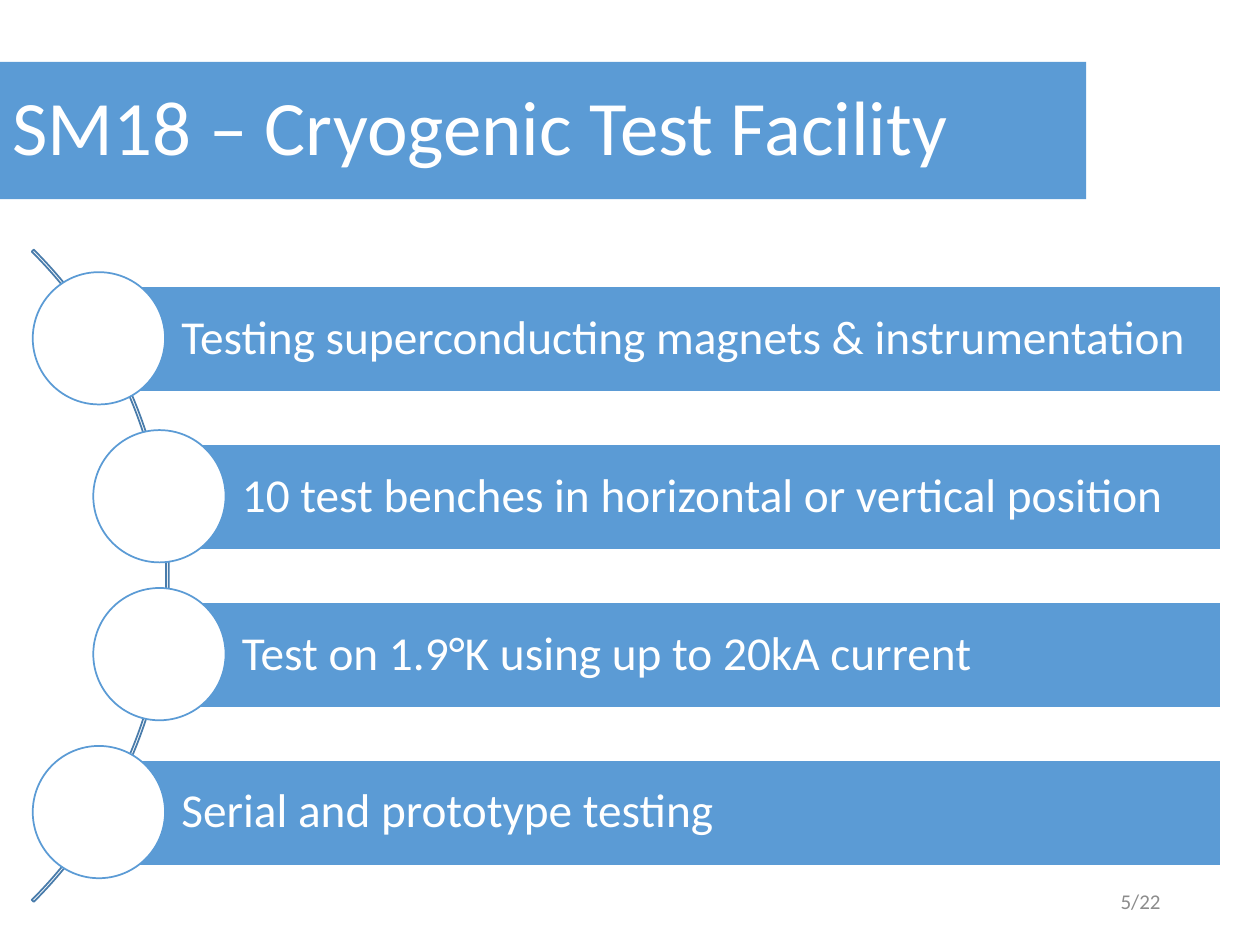
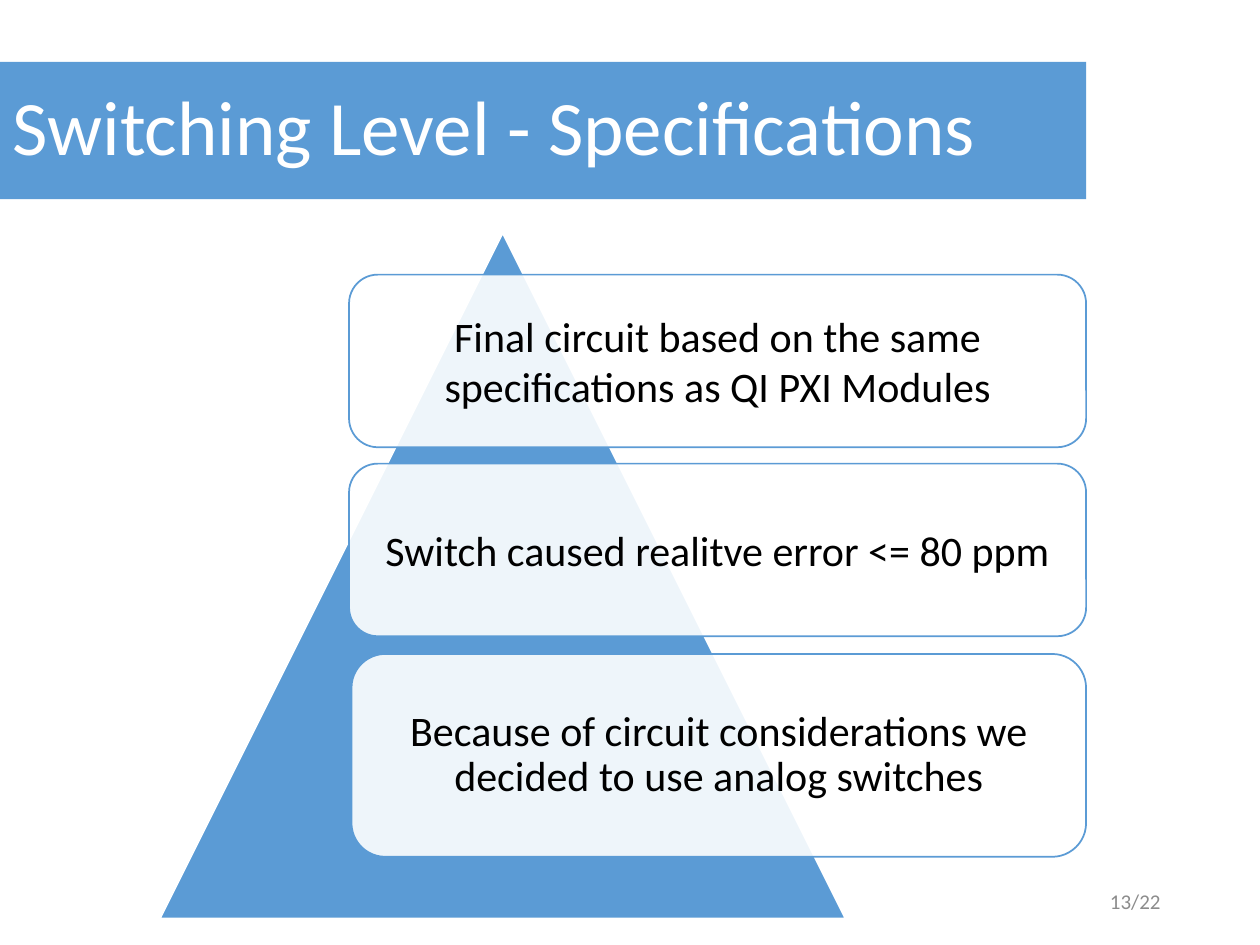
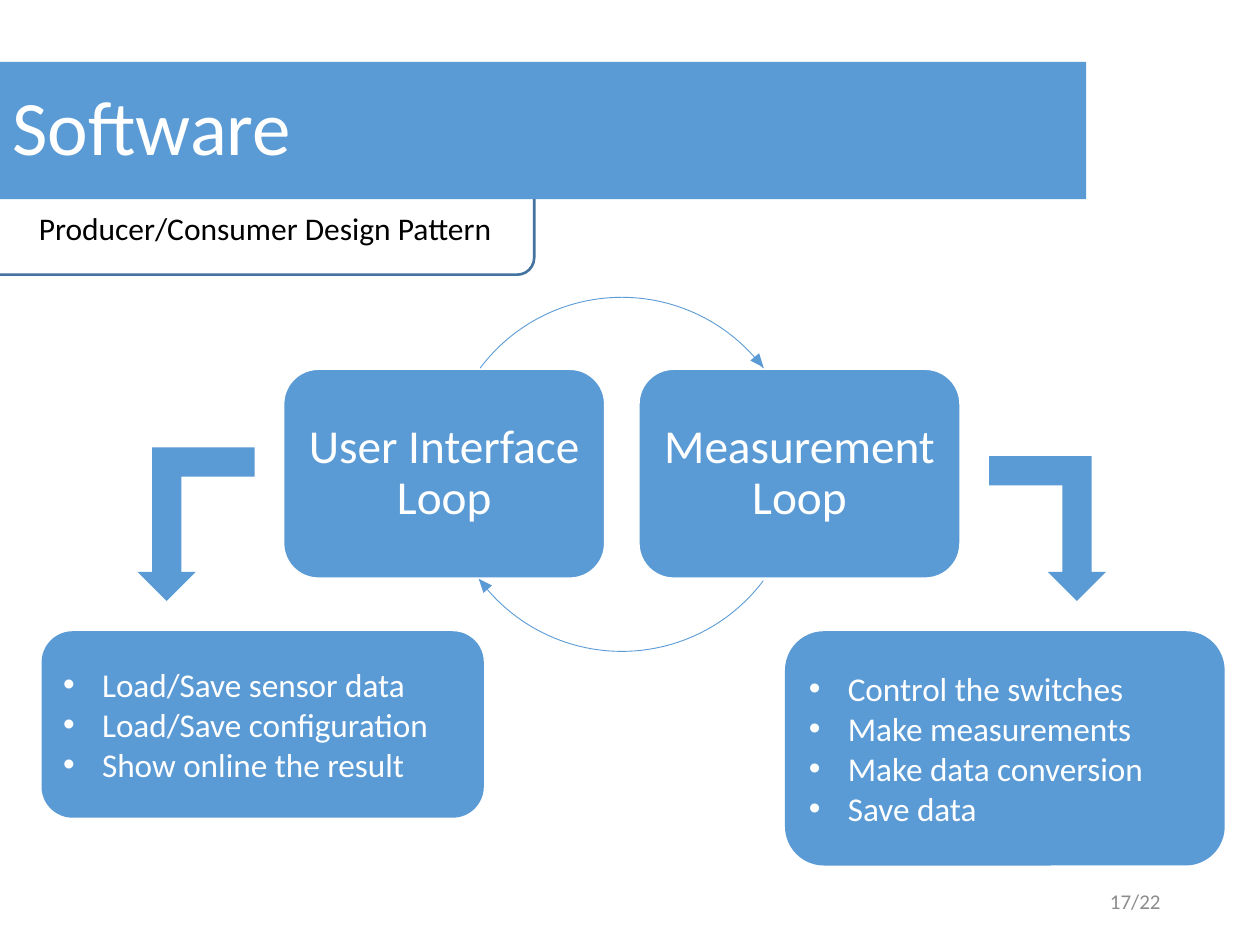
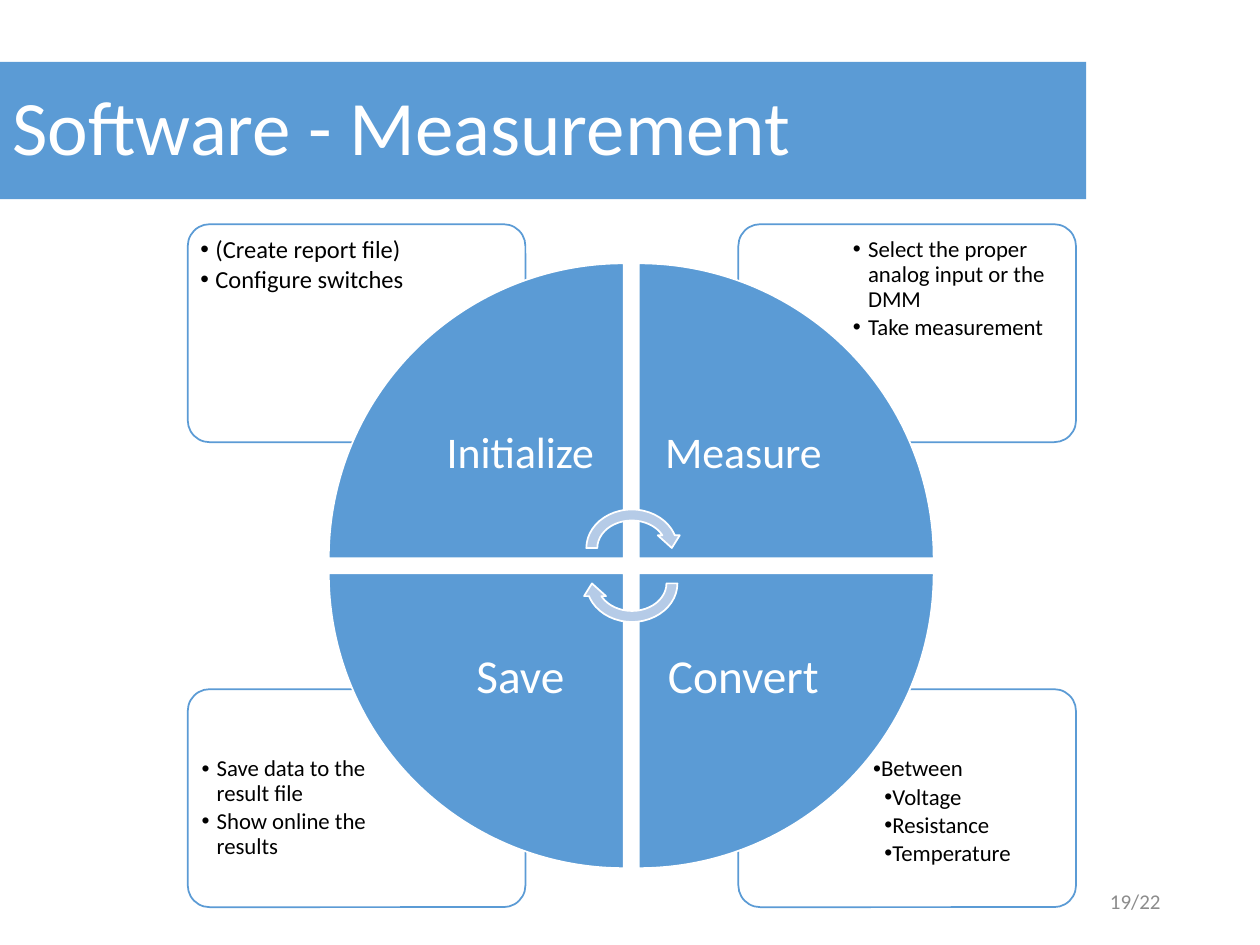
from lxml import etree
from pptx import Presentation, util as u
from pptx.dml.color import RGBColor
from pptx.enum import shapes, text
from pptx.oxml.ns import qn

BLUE, WHITE, BLACK = "5B9BD5", "FFFFFF", "000000"
PALE, EDGE, GREY = "B5CBE7", "43739E", "8C8C8C"
ARC = "497CAB"
FONT = "Calibri"
PAGES = 22
KIND = shapes.MSO_SHAPE
MID = text.MSO_ANCHOR.MIDDLE
LEFT, MIDDLE, RIGHT = (text.PP_ALIGN.LEFT, text.PP_ALIGN.CENTER,
                       text.PP_ALIGN.RIGHT)


def color(code):
    return RGBColor.from_string(code)


def apply(target, values):
    for name, value in values.items():
        setattr(target, name, value)


def place(shape, at):
    names = ("left", "top", "width", "height")
    apply(shape, {n: u.Inches(v) for n, v in zip(names, at)})


def bullet(para, left, hang):
    props = para._p.get_or_add_pPr()
    props.set("marL", str(u.Inches(left)))
    props.set("indent", str(u.Inches(hang)))
    etree.SubElement(props, qn("a:buFont")).set("typeface", "Arial")
    etree.SubElement(props, qn("a:buChar")).set("char", "•")


def write(shape, lines, size, ink=WHITE, align=LEFT, anchor=MID,
          pad=None, space=1, after=0, dents=None):
    """Fill a shape with paragraphs; dents lists (left, hang) per bullet."""
    frame = shape.text_frame
    apply(frame, {"word_wrap": True, "vertical_anchor": anchor,
                  "auto_size": text.MSO_AUTO_SIZE.NONE})
    if pad:
        sides = ("left", "top", "right", "bottom")
        apply(frame, {f"margin_{s}": u.Inches(v) for s, v in zip(sides, pad)})
    for i, line in enumerate(lines):
        para = frame.add_paragraph() if i else frame.paragraphs[0]
        if dents:
            bullet(para, *dents[i])
        apply(para, {"alignment": align, "line_spacing": space,
                     "space_before": u.Pt(0), "space_after": u.Pt(after)})
        run = para.add_run()
        run.text = line
        apply(run.font, {"name": FONT, "size": u.Pt(size)})
        run.font.color.rgb = color(ink)


def draw(slide, kind, at, fill=BLUE, line=None, width=1, alpha=None,
         turn=0, adjust=()):
    shape = slide.shapes.add_shape(kind, 0, 0, 0, 0)
    place(shape, at)
    shape.shadow.inherit = False
    shape.rotation = turn
    for i, value in enumerate(adjust):
        shape.adjustments[i] = value
    if fill:
        shape.fill.solid()
        shape.fill.fore_color.rgb = color(fill)
    else:
        shape.fill.background()
    if alpha:
        tint = shape.element.spPr.find(".//" + qn("a:srgbClr"))
        etree.SubElement(tint, qn("a:alpha")).set("val", str(alpha * 1000))
    if line:
        shape.line.color.rgb = color(line)
        shape.line.width = u.Pt(width)
    else:
        shape.line.fill.background()
    return shape


def label(slide, at, lines, size, **style):
    box = slide.shapes.add_textbox(0, 0, 0, 0)
    place(box, at)
    write(box, lines, size, **style)


def card(slide, at, **style):
    return draw(slide, KIND.ROUNDED_RECTANGLE, at, WHITE, BLUE, alpha=90,
                **style)


def banner(slide, words):
    """Format the title as a blue band above what is already drawn."""
    title = slide.shapes.title
    title.element.getparent().append(title.element)
    place(title, (0, 0.49, 8.62, 1.09))
    title.fill.solid()
    title.fill.fore_color.rgb = color(BLUE)
    write(title, [words], 44, space=0.9)


def footer(slide, page):
    label(slide, (7.06, 6.95, 2.25, 0.4), [f"{page}/{PAGES}"], 12,
          ink=GREY, align=RIGHT)


def facility(slide):
    banner(slide, "SM18 – Cryogenic Test Facility")
    draw(slide, KIND.BLOCK_ARC, (-5.98, 0.91, 7.32, 7.32), None, ARC,
         adjust=(189, 27, 0.003))
    rows = ((0.78, "Testing superconducting magnets & instrumentation"),
            (1.26, "10 test benches in horizontal or vertical position"),
            (1.26, "Test on 1.9°K using up to 20kA current"),
            (0.78, "Serial and prototype testing"))
    step = 3.76 / 3
    for i, (left, words) in enumerate(rows):
        top = 2.27 + i * step
        bar = draw(slide, KIND.RECTANGLE, (left, top, 9.69 - left, 0.84),
                   line=WHITE)
        write(bar, [words], 27, pad=(0.66, 0.07, 0.07, 0.07), space=0.9)
        draw(slide, KIND.OVAL, (left - 0.52, top - 0.11, 1.05, 1.05),
             WHITE, BLUE)


def limits(slide):
    banner(slide, "Switching Level - Specifications")
    draw(slide, KIND.ISOSCELES_TRIANGLE, (1.27, 1.85, 5.44, 5.44), line=WHITE)
    cards = (
        ((2.79, 5.19, 5.83, 1.61), 0.9, (0.1,) * 4,
         "Because of circuit considerations we decided to use analog switches"),
        ((2.77, 3.68, 5.85, 1.37), 1, None,
         "Switch caused realitve error <= 80 ppm"),
        ((2.77, 2.18, 5.85, 1.37), 1, None,
         "Final circuit based on the same specifications as QI PXI Modules"))
    for at, space, pad, words in cards:
        write(card(slide, at), [words], 24, ink=BLACK, align=MIDDLE,
              pad=pad, space=space)


def loops(slide):
    # Subtitle tab tucked under the band
    label(slide, (0.21, 1.61, 4, 0.4), ["Producer/Consumer Design Pattern"],
          18, ink=BLACK, anchor=text.MSO_ANCHOR.TOP)
    draw(slide, KIND.ROUNDED_RECTANGLE, (-0.2, 1.37, 4.44, 0.81), None,
         EDGE, 1.5)
    banner(slide, "Software")

    # Two loops and the cycle between them; arc angles in degrees
    for left, words in ((2.25, "User Interface Loop"),
                        (5.07, "Measurement Loop")):
        box = draw(slide, KIND.ROUNDED_RECTANGLE, (left, 2.93, 2.55, 1.66),
                   line=WHITE)
        write(box, [words], 27, align=MIDDLE, pad=(0.11,) * 4, space=0.9)
    for start, end in ((216.9, 323.1), (36.9, 143.1)):
        draw(slide, KIND.ARC, (3.53, 2.36, 2.81, 2.81), None, BLUE, 0.5,
             adjust=(start * 0.6, end * 0.6))

    # Tasks of each loop
    tasks = (
        ((0.33, 5.01, 3.51, 1.48), ["Load/Save sensor data",
                                    "Load/Save configuration",
                                    "Show online the result"]),
        ((6.23, 5.01, 3.49, 1.86), ["Control the switches",
                                    "Make measurements",
                                    "Make data conversion", "Save data"]))
    for at, lines in tasks:
        box = draw(slide, KIND.ROUNDED_RECTANGLE, at)
        write(box, lines, 19, dents=[(0.31, -0.31)] * len(lines))
    draw(slide, KIND.BENT_UP_ARROW, (1.09, 3.55, 0.93, 1.22), turn=180)
    bent = draw(slide, KIND.BENT_UP_ARROW, (7.85, 3.62, 0.93, 1.15), turn=180)
    bent.element.spPr.find(qn("a:xfrm")).set("flipH", "1")

    # Tips of the cycle
    for left, top, turn in ((5.98, 2.82, 140.4), (3.79, 4.58, 319.4)):
        draw(slide, KIND.ISOSCELES_TRIANGLE, (left, top, 0.09, 0.11),
             turn=turn)


def cycle(slide):
    banner(slide, "Software - Measurement")
    hang = [(0.12, -0.12)] * 2
    # Column, row, size, padding, dents, lines
    notes = (
        (1, 1, 13, 0.07, [(0.12, 0.04)] + [(0.25, 0)] * 3,
         ["Between", "Voltage", "Resistance", "Temperature"]),
        (0, 1, 13, 0.07, hang,
         ["Save data to the result file", "Show online the results"]),
        (1, 0, 13, 0.07, hang,
         ["Select the proper analog input or the DMM", "Take measurement"]),
        (0, 0, 14, 0.06, hang,
         ["(Create report file)", "Configure switches"]))
    for col, row, size, pad, dents, lines in notes:
        card(slide, ((1.49, 5.86)[col], (1.78, 5.47)[row], 2.68, 1.73),
             adjust=(0.1,))
        label(slide, ((1.53, 6.7)[col], (1.82, 5.94)[row], 1.8, 1.22),
              lines, size, ink=BLACK, anchor=text.MSO_ANCHOR.TOP,
              pad=(pad,) * 4, space=0.9, after=2, dents=dents)

    # Wedges clockwise from the top left
    steps = ((0, 0, "Initialize", 25, 0.19), (1, 0, "Measure", 25, 0.19),
             (1, 1, "Convert", 27, 0.21), (0, 1, "Save", 27, 0.21))
    for i, (col, row, word, size, pad) in enumerate(steps):
        draw(slide, KIND.PIE_WEDGE,
             ((2.61, 5.07)[col], (2.09, 4.55)[row], 2.34, 2.34),
             line=WHITE, turn=90 * i)
        label(slide, ((3.3, 5.07)[col], (2.78, 4.55)[row], 1.66, 1.66),
              [word], size, align=MIDDLE, pad=(pad,) * 4, space=0.9)
    for top, turn in ((4, 0), (4.28, 180)):
        draw(slide, KIND.CIRCULAR_ARROW, (4.61, top, 0.81, 0.7), PALE, WHITE,
             turn=turn)


def main():
    deck = Presentation()
    deck.slide_width, deck.slide_height = u.Inches(10), u.Inches(7.5)
    for build, page in ((facility, 5), (limits, 13), (loops, 17), (cycle, 19)):
        slide = deck.slides.add_slide(deck.slide_layouts[5])
        build(slide)
        footer(slide, page)
    deck.save("out.pptx")


if __name__ == "__main__":
    main()
